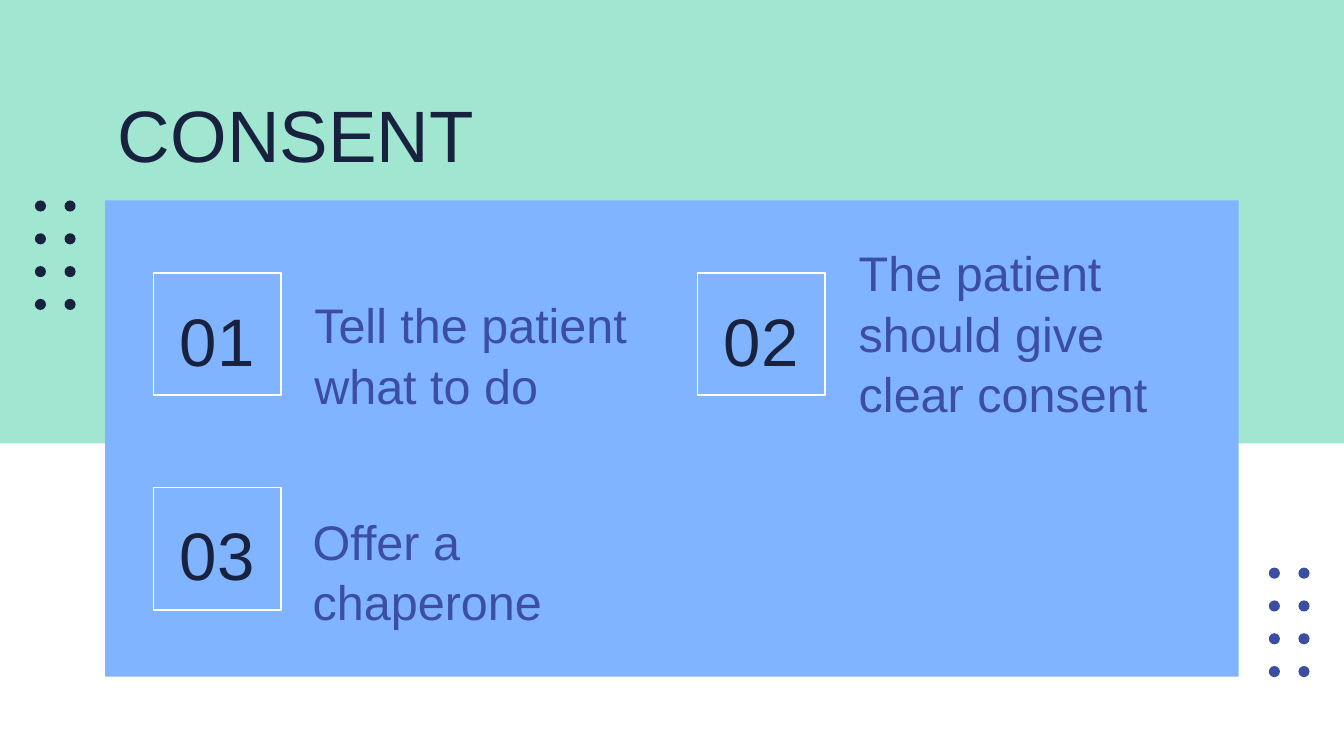
from pptx import Presentation
from pptx.dml.color import RGBColor
from pptx.enum.shapes import MSO_SHAPE as Shape
from pptx.enum.text import MSO_ANCHOR as Anchor, PP_ALIGN as Align
from pptx.util import Cm, Pt

MINT, WHITE, BLUE = "A1E6D1", "FFFFFF", "80B4FF"
NAVY, INDIGO = "18223F", "3C4EA2"


def color(hex_code):
    return RGBColor.from_string(hex_code)


class SlideBuilder:
    font = "Arial"
    inset = 0.25

    def __init__(self, slide):
        self.slide = slide

    def background(self, fill):
        self.slide.background.fill.solid()
        self.slide.background.fill.fore_color.rgb = color(fill)

    def shape(self, kind, left, top, width, height, fill=None, line=None):
        shape = self.slide.shapes.add_shape(
            kind, Cm(left), Cm(top), Cm(width), Cm(height))
        shape.shadow.inherit = False
        if fill:
            shape.fill.solid()
            shape.fill.fore_color.rgb = color(fill)
        else:
            shape.fill.background()
        if line:
            shape.line.color.rgb = color(line)
            shape.line.width = Pt(0.75)
        else:
            shape.line.fill.background()
        return shape

    def dots(self, left, top, fill):
        """Draw a grid of two columns and four rows of dots."""
        for row in range(4):
            for column in range(2):
                self.shape(Shape.OVAL, left + 0.56 * column, top + 0.62 * row,
                           0.21, 0.21, fill)

    def set_text(self, shape, text, size, ink, drop, align=Align.LEFT,
                 anchor=Anchor.TOP, spacing=1.0):
        """Fill a shape with text; drop is added to the top inset."""
        frame = shape.text_frame
        frame.word_wrap = True
        frame.vertical_anchor = anchor
        frame.margin_left = frame.margin_right = Cm(self.inset)
        frame.margin_bottom = Cm(self.inset)
        frame.margin_top = Cm(self.inset + drop)
        paragraph = frame.paragraphs[0]
        paragraph.text = text
        paragraph.alignment = align
        paragraph.line_spacing = spacing
        paragraph.font.name = self.font
        paragraph.font.size = Pt(size)
        paragraph.font.color.rgb = color(ink)

    def text(self, left, top, width, height, text, size, ink, drop, spacing=1.0):
        box = self.slide.shapes.add_textbox(
            Cm(left), Cm(top), Cm(width), Cm(height))
        self.set_text(box, text, size, ink, drop, spacing=spacing)

    def number(self, left, top, text):
        box = self.shape(Shape.RECTANGLE, left, top, 2.41, 2.31, line=WHITE)
        self.set_text(box, text, 36, NAVY, 0.2, Align.CENTER, Anchor.MIDDLE)


def main():
    presentation = Presentation()
    presentation.slide_width, presentation.slide_height = Cm(25.4), Cm(14.29)
    slide = presentation.slides.add_slide(presentation.slide_layouts[6])
    builder = SlideBuilder(slide)

    builder.background(MINT)
    builder.shape(Shape.RECTANGLE, 0, 8.38, 25.4, 5.91, WHITE)
    builder.shape(Shape.RECTANGLE, 1.99, 3.79, 21.42, 9, BLUE)
    builder.dots(0.66, 3.79, NAVY)
    builder.dots(23.98, 10.73, INDIGO)
    builder.text(1.98, 1.3, 21.44, 1.7, "CONSENT", 39, NAVY, 0.14)

    steps = [
        (2.9, 5.16, 5.69, 5.21, "Tell the patient what to do"),
        (13.18, 5.16, 15.98, 4.22, "The patient should give clear consent"),
        (2.9, 9.22, 5.66, 9.3, "Offer a chaperone"),
    ]
    for index, (left, top, text_left, text_top, text) in enumerate(steps, 1):
        builder.number(left, top, f"{index:02}")
        builder.text(text_left, text_top, 7.04, 2.31, text, 26, INDIGO,
                     0.08, spacing=1.04)

    presentation.save("out.pptx")


if __name__ == "__main__":
    main()
